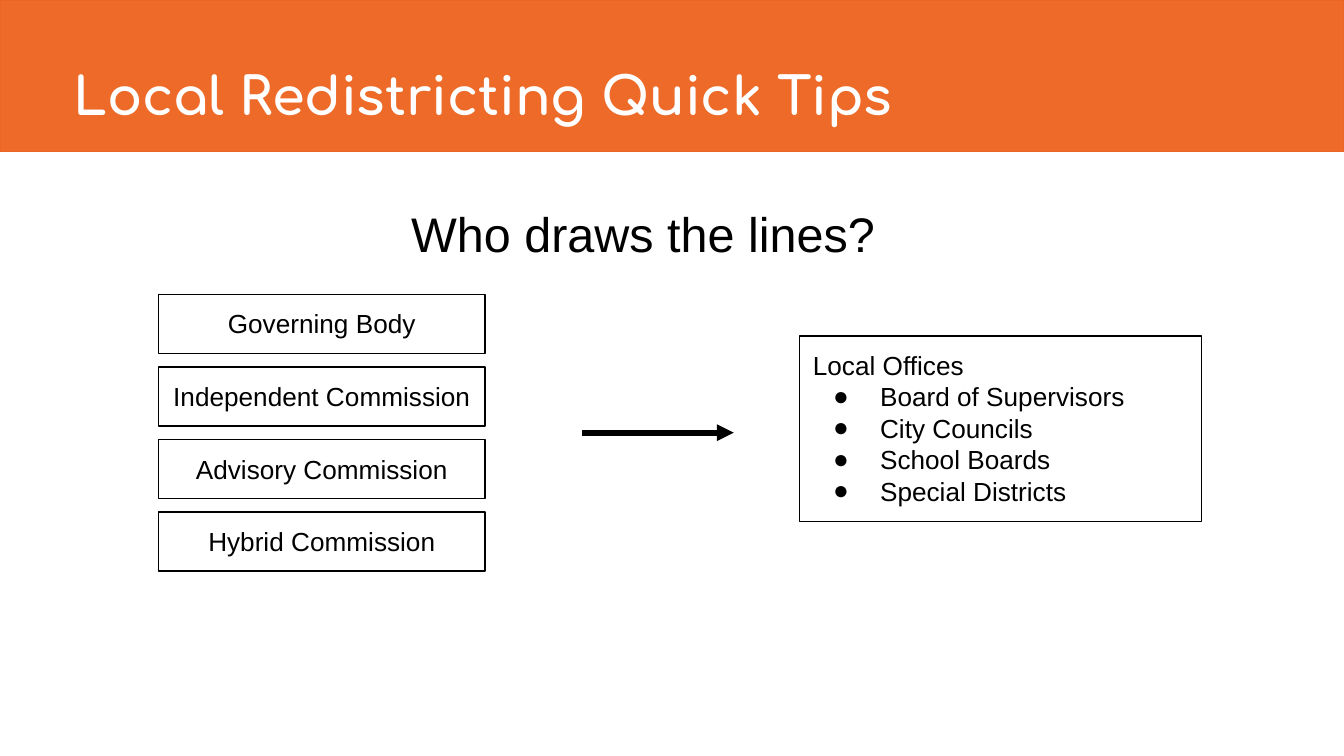
from dataclasses import dataclass

from lxml import etree
from pptx import Presentation
from pptx.dml.color import RGBColor
from pptx.enum.shapes import MSO_CONNECTOR, MSO_SHAPE
from pptx.enum.text import MSO_ANCHOR, MSO_AUTO_SIZE, PP_ALIGN
from pptx.oxml.ns import qn
from pptx.util import Inches, Pt

RECT = MSO_SHAPE.RECTANGLE
STRAIGHT = MSO_CONNECTOR.STRAIGHT
TOP, BOTTOM = MSO_ANCHOR.TOP, MSO_ANCHOR.BOTTOM
LEFT, CENTER = PP_ALIGN.LEFT, PP_ALIGN.CENTER
GROW, FIXED = MSO_AUTO_SIZE.SHAPE_TO_FIT_TEXT, MSO_AUTO_SIZE.NONE
BLACK, WHITE = "000000", "FFFFFF"
BODY = {"name": "Arial", "size": Pt(14), "bold": False}
HEADING = {"name": "Arial", "size": Pt(26), "bold": False}
TITLE = {"name": "Comfortaa", "size": Pt(28), "bold": True}


@dataclass
class Box:
    left: float
    top: float
    width: float
    height: float

    def lengths(self):
        return [Inches(v) for v in (self.left, self.top, self.width, self.height)]


def rgb(value: str) -> RGBColor:
    return RGBColor.from_string(value)


def add_rect(s, box: Box, line: str, fill: str = ""):
    sp = s.shapes.add_shape(RECT, *box.lengths())
    sp.shadow.inherit = False
    if fill:
        sp.fill.solid()
        sp.fill.fore_color.rgb = rgb(fill)
    else:
        sp.fill.background()
    sp.line.color.rgb = rgb(line)
    sp.line.width = Pt(0.75)
    return sp


def set_frame(sp, anchor=TOP, margin: float = 0.1, auto_size=GROW):
    tf = sp.text_frame
    settings = {
        "word_wrap": True, "auto_size": auto_size, "vertical_anchor": anchor,
        "margin_left": Inches(0.1), "margin_right": Inches(0.1),
        "margin_top": Inches(margin), "margin_bottom": Inches(margin),
    }
    for name, value in settings.items():
        setattr(tf, name, value)
    return tf


def write(p, text: str, style: dict, color: str = BLACK, align=LEFT) -> None:
    p.alignment = align
    r = p.add_run()
    r.text = text
    for name, value in style.items():
        setattr(r.font, name, value)
    r.font.color.rgb = rgb(color)


def add_bullet(p) -> None:
    pPr = p._p.get_or_add_pPr()
    pPr.set("marL", str(Inches(0.5)))
    pPr.set("indent", str(Inches(-0.35)))
    clr = etree.SubElement(pPr, qn("a:buClr"))
    etree.SubElement(clr, qn("a:srgbClr")).set("val", BLACK)
    etree.SubElement(pPr, qn("a:buFont")).set("typeface", "Arial")
    etree.SubElement(pPr, qn("a:buChar")).set("char", "●")


def add_arrow(s, x1: float, x2: float, y: float) -> None:
    arrow = s.shapes.add_connector(STRAIGHT, Inches(x1), Inches(y), Inches(x2), Inches(y))
    arrow.line.color.rgb = rgb(BLACK)
    arrow.line.width = Pt(3)
    etree.SubElement(arrow.line._get_or_add_ln(), qn("a:tailEnd")).set("type", "triangle")
    etree.SubElement(arrow._element.spPr, qn("a:effectLst"))


def main() -> None:
    prs = Presentation()
    prs.slide_width = Inches(10)
    prs.slide_height = prs.slide_width * 9 // 16
    s = prs.slides.add_slide(prs.slide_layouts[6])

    add_rect(s, Box(0, 0, 10, 1.13), "EC6523", "EE6A29")
    title = s.shapes.add_textbox(*Box(0.45, 0.2, 7.16, 0.79).lengths())
    tf = set_frame(title, BOTTOM, 0.05, FIXED)
    write(tf.paragraphs[0], "Local Redistricting Quick Tips", TITLE, WHITE)

    heading = s.shapes.add_textbox(*Box(2.96, 1.42, 3.91, 0.64).lengths())
    write(set_frame(heading).paragraphs[0], "Who draws the lines?", HEADING)

    tf = set_frame(add_rect(s, Box(5.95, 2.5, 2.99, 1.38), BLACK))
    write(tf.paragraphs[0], "Local Offices", BODY)
    for office in ("Board of Supervisors", "City Councils", "School Boards", "Special Districts"):
        p = tf.add_paragraph()
        add_bullet(p)
        write(p, office, BODY)

    add_arrow(s, 4.33, 5.46, 3.22)

    bodies = ("Governing Body", "Independent Commission", "Advisory Commission", "Hybrid Commission")
    for i, body in enumerate(bodies):
        sp = add_rect(s, Box(1.18, 2.19 + i * 0.54, 2.43, 0.44), BLACK)
        write(set_frame(sp).paragraphs[0], body, BODY, align=CENTER)

    prs.save("out.pptx")


if __name__ == "__main__":
    main()
